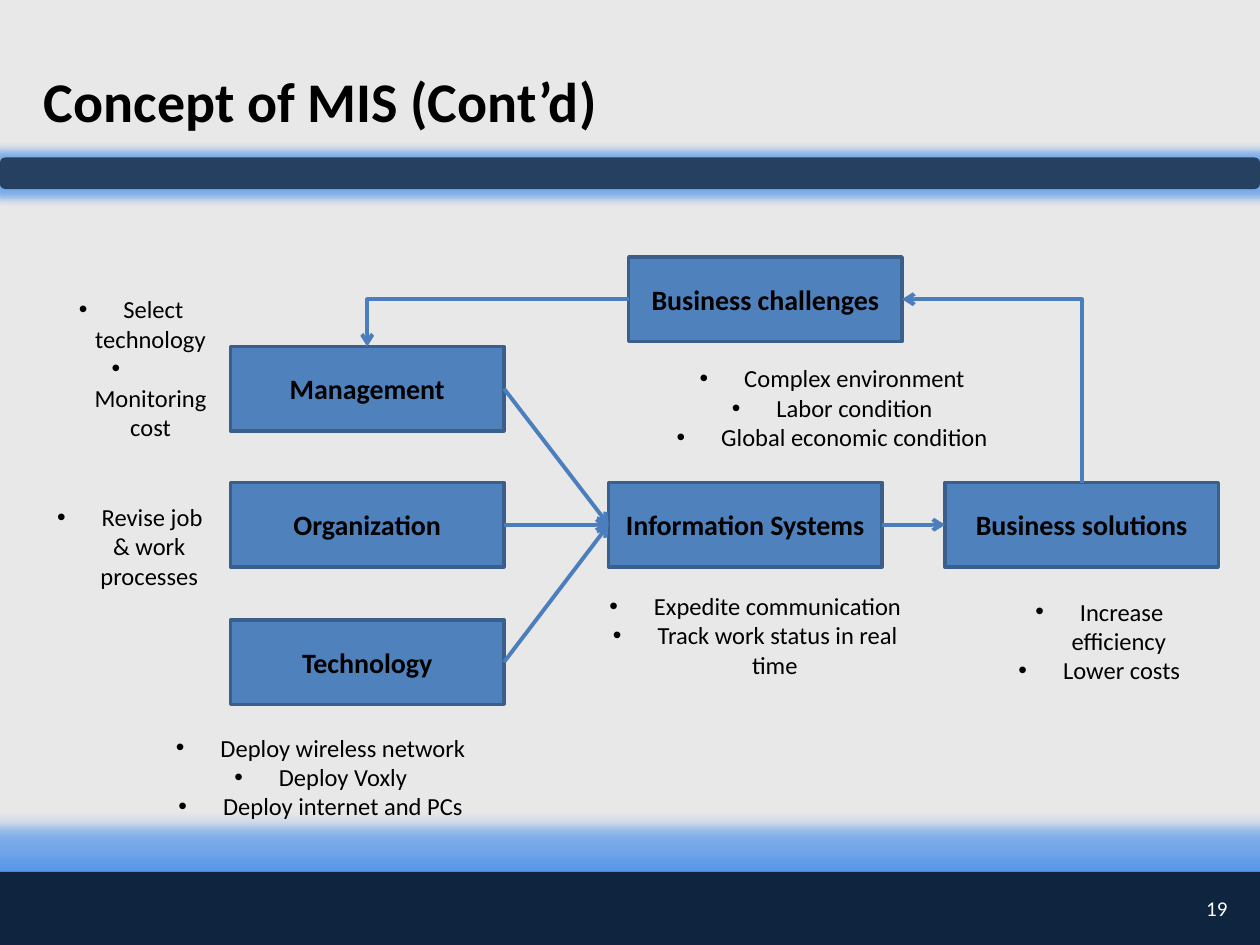
import pptx
import pptx.util
import pptx.dml.color
import pptx.enum.shapes
import pptx.enum.text
import pptx.oxml
import pptx.oxml.ns
from lxml import etree

Inches = pptx.util.Inches
qn = pptx.oxml.ns.qn
SHAPE = pptx.enum.shapes.MSO_SHAPE
CONNECTOR = pptx.enum.shapes.MSO_CONNECTOR
ALIGN = pptx.enum.text.PP_ALIGN
COLORS = {
    "background": "E8E8E8",
    "footer": "0F243E",
    "band": "254061",
    "glow": "4A90E8",
    "box": "4F81BD",
    "border": "3A5F8C",
    "arrow": "4B7EBC",
    "text": "000000",
    "number": "FFFFFF",
}
COLORS = {name: pptx.dml.color.RGBColor.from_string(value) for name, value in COLORS.items()}


def write_text(shape, lines, size, color="text", bold=False, align=ALIGN.CENTER, bullets=False):
    frame = shape.text_frame
    frame.word_wrap = True
    frame.vertical_anchor = pptx.enum.text.MSO_ANCHOR.MIDDLE
    frame.text = "\n".join(lines)
    formats = {"name": "Calibri", "size": pptx.util.Pt(size), "bold": bold}
    for paragraph in frame.paragraphs:
        paragraph.alignment = align
        for name, value in formats.items():
            setattr(paragraph.runs[0].font, name, value)
        paragraph.runs[0].font.color.rgb = COLORS[color]
        if bullets:
            properties = paragraph._p.get_or_add_pPr()
            properties.set("marL", str(Inches(0.31)))
            properties.set("indent", str(Inches(-0.31)))
            etree.SubElement(properties, qn("a:buFont"), typeface="Arial")
            etree.SubElement(properties, qn("a:buChar"), char="•")


def add_block(kind, left, top, width, height, fill):
    shape = slide.shapes.add_shape(kind, Inches(left), Inches(top), Inches(width), Inches(height))
    shape.shadow.inherit = False
    shape.fill.solid()
    shape.fill.fore_color.rgb = COLORS[fill]
    shape.line.fill.background()
    return shape


presentation = pptx.Presentation()
presentation.slide_width = Inches(10)
presentation.slide_height = Inches(7.5)
slide = presentation.slides.add_slide(presentation.slide_layouts[6])
slide.background.fill.solid()
slide.background.fill.fore_color.rgb = COLORS["background"]

for kind, top, height, fill, radius in [
    (SHAPE.RECTANGLE, 6.92, 0.58, "footer", 0.25),
    (SHAPE.ROUNDED_RECTANGLE, 1.25, 0.25, "band", 0.14),
]:
    bar = add_block(kind, 0, top, 10, height, fill)
    effects = bar._element.spPr.find(qn("a:effectLst"))
    glow = etree.SubElement(effects, qn("a:glow"), rad=str(Inches(radius)))
    color = etree.SubElement(glow, qn("a:srgbClr"), val=str(COLORS["glow"]))
    etree.SubElement(color, qn("a:alpha"), val="70000")

boxes = {}
for label, left, top in [
    ("Management", 1.83, 2.75),
    ("Organization", 1.83, 3.83),
    ("Technology", 1.83, 4.92),
    ("Information Systems", 4.83, 3.83),
    ("Business challenges", 4.99, 2.04),
    ("Business solutions", 7.5, 3.83),
]:
    box = add_block(SHAPE.RECTANGLE, left, top, 2.17, 0.67, "box")
    box.line.color.rgb = COLORS["border"]
    box.line.width = pptx.util.Pt(2)
    write_text(box, [label], 16, bold=True)
    boxes[label] = box

TOP, LEFT, RIGHT = 0, 1, 3
for kind, start, start_site, end, end_site, arrow_end in [
    (CONNECTOR.STRAIGHT, "Management", RIGHT, "Information Systems", LEFT, "a:tailEnd"),
    (CONNECTOR.STRAIGHT, "Organization", RIGHT, "Information Systems", LEFT, "a:tailEnd"),
    (CONNECTOR.STRAIGHT, "Technology", RIGHT, "Information Systems", LEFT, "a:tailEnd"),
    (CONNECTOR.STRAIGHT, "Information Systems", RIGHT, "Business solutions", LEFT, "a:tailEnd"),
    (CONNECTOR.ELBOW, "Business challenges", LEFT, "Management", TOP, "a:tailEnd"),
    (CONNECTOR.ELBOW, "Business challenges", RIGHT, "Business solutions", TOP, "a:headEnd"),
]:
    connector = slide.shapes.add_connector(kind, 0, 0, 0, 0)
    connector.begin_connect(boxes[start], start_site)
    connector.end_connect(boxes[end], end_site)
    connector.line.color.rgb = COLORS["arrow"]
    connector.line.width = pptx.util.Pt(2.25)
    properties = connector._element.spPr
    if kind == CONNECTOR.ELBOW:
        properties.find(qn("a:prstGeom")).set("prst", "bentConnector2")
    etree.SubElement(connector.line._get_or_add_ln(), qn(arrow_end), type="arrow")
    etree.SubElement(properties, qn("a:effectLst"))

bulleted = {"size": 14, "bullets": True}
for left, top, width, height, lines, style in [
    (0.25, 0.42, 8.67, 0.75, ["Concept of MIS (Cont’d)"], {"size": 32, "bold": True, "align": ALIGN.LEFT}),
    (0.32, 3.92, 1.42, 0.83, [" Revise job & work processes"], bulleted),
    (0.33, 2.42, 1.42, 1, [" Select technology", " Monitoring cost"], bulleted),
    (0.92, 5.75, 3.25, 0.83,
     [" Deploy wireless network", " Deploy Voxly", " Deploy internet and PCs"], bulleted),
    (4.58, 4.75, 2.83, 0.58, [" Expedite communication", " Track work status in real time"], bulleted),
    (5.21, 2.9, 2.79, 0.67,
     [" Complex environment", " Labor condition", " Global economic condition"], bulleted),
    (7.78, 4.75, 1.89, 0.67, [" Increase efficiency", " Lower costs"], bulleted),
    (9.42, 7, 0.42, 0.42, ["19"], {"size": 12, "color": "number", "align": ALIGN.RIGHT}),
]:
    textbox = slide.shapes.add_textbox(Inches(left), Inches(top), Inches(width), Inches(height))
    write_text(textbox, lines, **style)

presentation.save("out.pptx")
